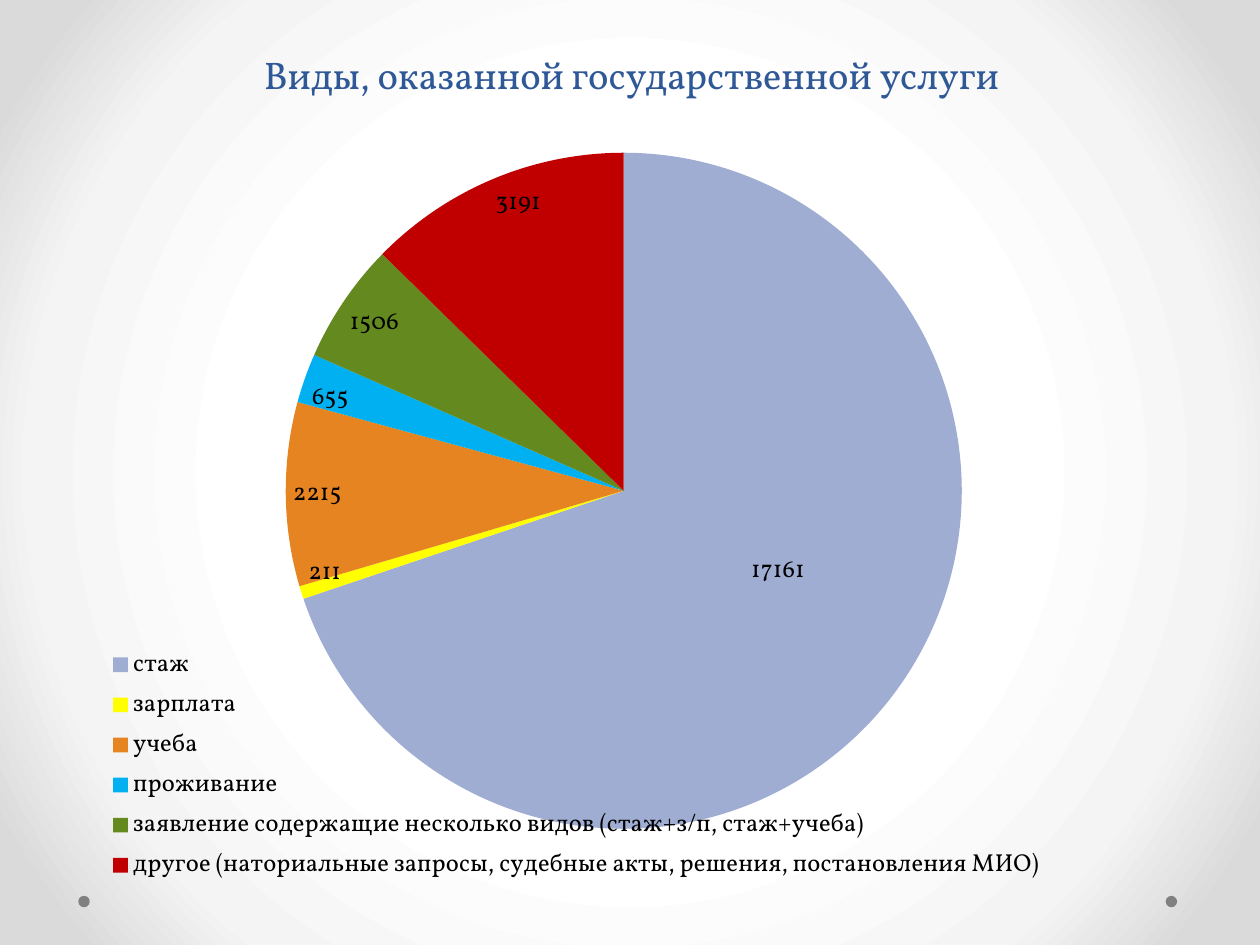
from dataclasses import dataclass
from lxml.etree import SubElement, _Element
from pptx import Presentation
from pptx.chart.chart import Chart
from pptx.chart.data import CategoryChartData
from pptx.dml.color import RGBColor
from pptx.enum.chart import XL_CHART_TYPE, XL_LABEL_POSITION, XL_LEGEND_POSITION
from pptx.enum.shapes import MSO_SHAPE
from pptx.enum.text import MSO_ANCHOR, PP_ALIGN
from pptx.oxml import parse_xml
from pptx.oxml.ns import nsdecls, qn
from pptx.slide import Slide
from pptx.util import Cm, Pt

FONT = "Vollkorn"
WIDE, HIGH = 24, 15.39
COLORS = {
    "title": "2F5897", "text": "000000", "dot": "808080",
    "lilac": "A0ADD2", "yellow": "FFFF00", "orange": "E68422",
    "blue": "00B0F0", "green": "63891F", "red": "C00000",
}
STOPS = {50: "FFFFFF", 76: "F4F4F4", 92: "DADADA"}


@dataclass
class Slice:
    name: str
    value: int
    label: str
    color: str
    shift: tuple[float, float] | None = None


SLICES = [
    Slice("стаж", 17048, "17161", "lilac", (-1.76, -1.93)),
    Slice("зарплата", 151, "211", "yellow"),
    Slice("учеба", 2145, "2215", "orange"),
    Slice("проживание", 575, "655", "blue"),
    Slice("заявление содержащие несколько видов (стаж+з/п, стаж+учеба)",
          1406, "1506", "green"),
    Slice("другое (наториальные запросы, судебные акты, решения, постановления МИО)",
          3091, "3191", "red"),
]


def tint(key: str) -> RGBColor:
    return RGBColor.from_string(COLORS[key])


def style(font, size: int, key: str, bold: bool = False) -> None:
    font.name = FONT
    font.size = Pt(size)
    font.bold = bold
    font.color.rgb = tint(key)


def place(host: _Element, index: int, modes: dict[str, str],
          **sides: float) -> None:
    for old in host.findall(qn("c:layout")):
        host.remove(old)
    layout = parse_xml(f"<c:layout {nsdecls('c')}/>")
    manual = SubElement(layout, qn("c:manualLayout"))
    for tag, mode in modes.items():
        SubElement(manual, qn(f"c:{tag}")).set("val", mode)
    for tag, size in sides.items():
        whole = WIDE if tag in "xw" else HIGH
        SubElement(manual, qn(f"c:{tag}")).set("val", str(size / whole))
    host.insert(index, layout)


def paint_back(slide: Slide) -> None:
    stops = "".join(
        f'<a:gs pos="{pos * 1000}"><a:srgbClr val="{color}"/></a:gs>'
        for pos, color in STOPS.items())
    slide.background.fill.solid()
    props = slide.background._cSld.bg.bgPr
    props.replace(props[0], parse_xml(
        f'<a:gradFill {nsdecls("a")} rotWithShape="1"><a:gsLst>{stops}</a:gsLst>'
        '<a:path path="circle"><a:fillToRect l="50000" t="50000" r="50000" b="50000"/>'
        "</a:path></a:gradFill>"))


def add_dot(slide: Slide, left: float) -> None:
    dot = slide.shapes.add_shape(
        MSO_SHAPE.OVAL, Cm(left), Cm(18.06), Cm(0.23), Cm(0.23))
    dot.shadow.inherit = False
    dot.fill.solid()
    dot.fill.fore_color.rgb = tint("dot")
    dot.line.fill.background()


def add_title(slide: Slide, text: str) -> None:
    box = slide.shapes.add_textbox(Cm(1.3), Cm(0.91), Cm(22.86), Cm(1.17))
    frame = box.text_frame
    frame.word_wrap = True
    frame.vertical_anchor = MSO_ANCHOR.BOTTOM
    frame.text = text
    line = frame.paragraphs[0]
    line.alignment = PP_ALIGN.CENTER
    line.line_spacing = Pt(58)
    style(line.runs[0].font, 22, "title")


def add_pie(slide: Slide) -> Chart:
    data = CategoryChartData(number_format="0")
    data.categories = [part.name for part in SLICES]
    data.add_series("Series 1", [part.value for part in SLICES])
    chart = slide.shapes.add_chart(
        XL_CHART_TYPE.PIE, Cm(0.89), Cm(2.72), Cm(WIDE), Cm(HIGH), data).chart
    chart.has_title = False
    style(chart.font, 14, "text")
    plot = chart.plots[0]
    plot.vary_by_categories = True
    series = plot.series[0]
    for index, part in enumerate(SLICES):
        paint_slice(series.points[index], part)
    labels = series.data_labels
    labels.show_value = True
    labels.position = XL_LABEL_POSITION.INSIDE_END
    style(labels.font, 14, "text", bold=True)
    place(chart._chartSpace.chart.plotArea, 0,
          {"layoutTarget": "inner", "xMode": "edge", "yMode": "edge"},
          x=4.87, y=0.36, w=13.63, h=13.63)
    return chart


def paint_slice(point, part: Slice) -> None:
    point.format.fill.solid()
    point.format.fill.fore_color.rgb = tint(part.color)
    point.format.line.fill.background()
    label = point.data_label
    label.text_frame.text = part.label
    style(label.text_frame.paragraphs[0].runs[0].font, 14, "text")
    label.position = XL_LABEL_POSITION.INSIDE_END
    if part.shift:
        left, top = part.shift
        place(label._dLbl, 1, {}, x=left, y=top)


def add_legend(chart: Chart) -> None:
    chart.has_legend = True
    legend = chart.legend
    legend.position = XL_LEGEND_POSITION.BOTTOM
    legend.include_in_layout = False
    style(legend.font, 14, "text")
    place(legend._element, 1, {"xMode": "edge", "yMode": "edge"},
          x=0.9, y=10.22, w=19.68, h=4.97)


def main() -> None:
    deck = Presentation()
    deck.slide_width, deck.slide_height = Cm(25.4), Cm(19.05)
    slide = deck.slides.add_slide(deck.slide_layouts[6])
    paint_back(slide)
    for left in (23.5, 1.58):
        add_dot(slide, left)
    add_title(slide, "Виды, оказанной государственной услуги")
    add_legend(add_pie(slide))
    deck.save("out.pptx")


if __name__ == "__main__":
    main()
